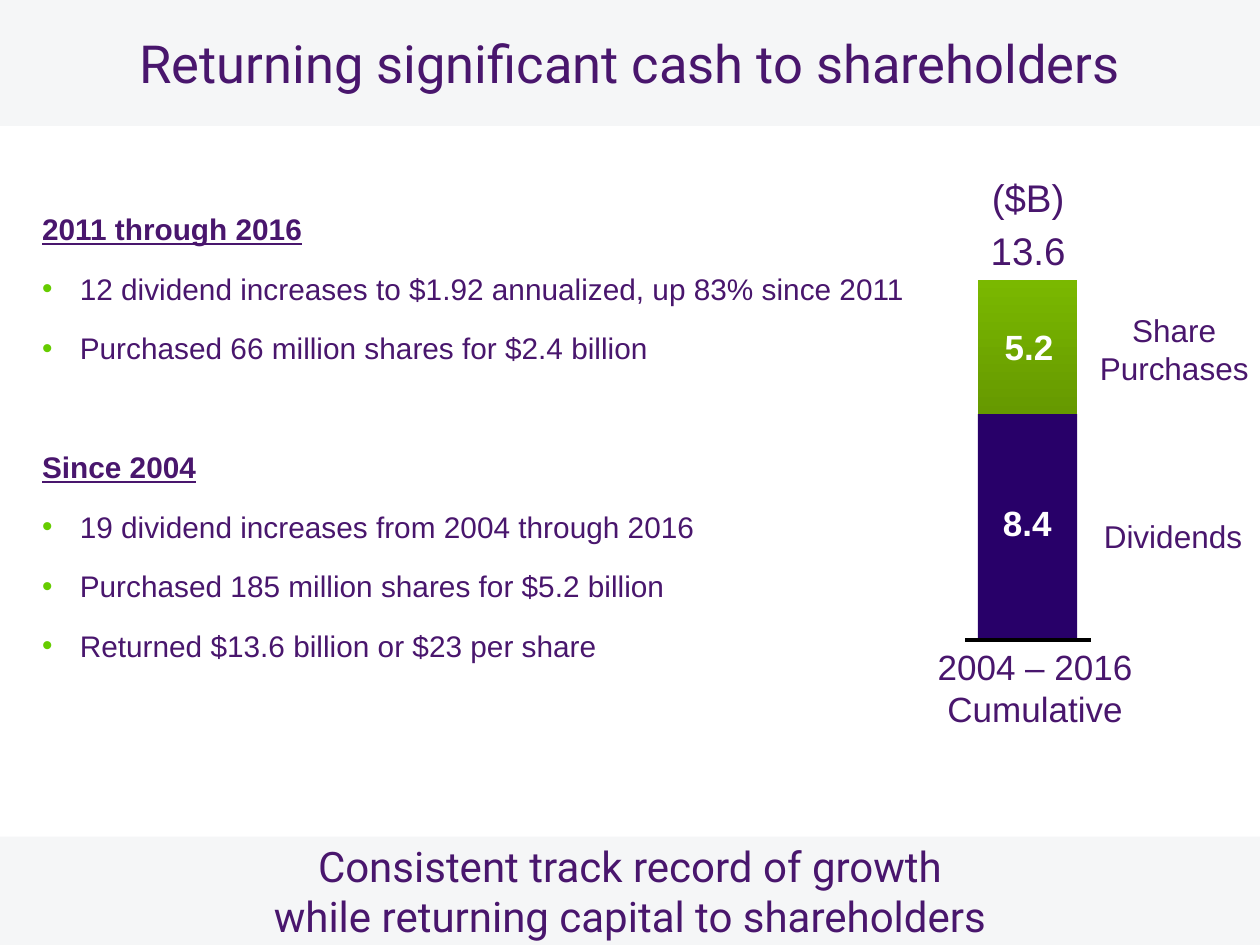
from lxml import etree
from pptx import Presentation
from pptx.dml.color import RGBColor
from pptx.enum.shapes import MSO_CONNECTOR, MSO_SHAPE
from pptx.enum.text import MSO_ANCHOR, PP_ALIGN
from pptx.oxml.ns import qn
from pptx.util import Pt

PURPLE, PALE, WHITE = "49166D", "F5F6F7", "FFFFFF"
rgb = RGBColor.from_string


def write(shape, text, size, color=PURPLE, face="Arial", bold=False, inset=0):
    """Fill a shape with centred text, in the middle of its height."""
    frame = shape.text_frame
    frame.word_wrap = True
    frame.vertical_anchor = MSO_ANCHOR.MIDDLE
    frame.margin_left = frame.margin_right = Pt(inset)
    frame.margin_top = frame.margin_bottom = Pt(inset / 2)
    frame.text = text
    for para in frame.paragraphs:
        para.alignment = PP_ALIGN.CENTER
        for run in para.runs:
            font = run.font
            font.name, font.size, font.bold = face, Pt(size), bold
            font.color.rgb = rgb(color)


def add_rect(left, top, width, height, fill):
    rect = slide.shapes.add_shape(
        MSO_SHAPE.RECTANGLE, Pt(left), Pt(top), Pt(width), Pt(height))
    rect.shadow.inherit = False
    rect.line.fill.background()
    rect.fill.solid()
    rect.fill.fore_color.rgb = rgb(fill)
    return rect


prs = Presentation()
prs.slide_width, prs.slide_height = Pt(720), Pt(540)
slide = prs.slides.add_slide(prs.slide_layouts[5])

# Title band
title = slide.shapes.title
title.left, title.top, title.width, title.height = Pt(0), Pt(0), Pt(720), Pt(72)
title.fill.solid()
title.fill.fore_color.rgb = rgb(PALE)
write(title, "Returning significant cash to shareholders", 30, face="Roboto")

# Headings and bullets
lines = [
    ("2011 through 2016", True),
    ("12 dividend increases to $1.92 annualized, up 83% since 2011", False),
    ("Purchased 66 million shares for $2.4 billion", False),
    ("Since 2004", True),
    ("19 dividend increases from 2004 through 2016", False),
    ("Purchased 185 million shares for $5.2 billion", False),
    ("Returned $13.6 billion or $23 per share", False),
]
body = slide.shapes.add_textbox(Pt(24), Pt(113), Pt(538.5), Pt(346)).text_frame
body.word_wrap = True
body.margin_left = body.margin_right = body.margin_top = body.margin_bottom = 0
body.text = "\n".join(text for text, head in lines)
for i, (para, (text, head)) in enumerate(zip(body.paragraphs, lines)):
    props = para._p.get_or_add_pPr()
    para.line_spacing = Pt(28)
    para.space_before = Pt(0 if i == 0 else 40 if head else 6)
    if not head:
        props.set("marL", str(Pt(21.6)))
        props.set("indent", str(-Pt(21.6)))
        tint = etree.SubElement(props, qn("a:buClr"))
        etree.SubElement(tint, qn("a:srgbClr")).set("val", "66CC00")
        etree.SubElement(props, qn("a:buFont")).set("typeface", "Arial")
        etree.SubElement(props, qn("a:buChar")).set("char", "•")
    font = para.runs[0].font
    font.name, font.size = "Arial", Pt(17)
    font.bold = font.underline = head
    font.color.rgb = rgb(PURPLE)

# Stacked bar on its base line
shares = add_rect(558.8, 160, 56.8, 76.6, "7AB800")
shares.fill.gradient()
shares.fill.gradient_angle = 270
for stop, color in zip(shares.fill.gradient_stops, ("7AB800", "669900")):
    stop.color.rgb = rgb(color)
add_rect(558.8, 236.6, 56.8, 129, "280069")
base = slide.shapes.add_connector(
    MSO_CONNECTOR.STRAIGHT, Pt(551.5), Pt(365.8), Pt(623.5), Pt(365.8))
base.line.color.rgb = rgb("000000")
base.line.width = Pt(2)
etree.SubElement(base._element.spPr, qn("a:effectLst"))

# Labels: text, left, top, width, height, size, colour, bold, inset
labels = [
    ("($B)", 533.5, 96, 108, 33.8, 22, PURPLE, False, 7.2),
    ("13.6", 533.5, 126, 108, 33.8, 22, PURPLE, False, 7.2),
    ("5.2", 537, 186, 102, 24.5, 20, WHITE, True, 0),
    ("8.4", 571, 286.5, 32, 24.5, 20, WHITE, True, 0),
    ("Share Purchases", 602, 174, 138, 51, 18, PURPLE, False, 7.2),
    ("Dividends", 599, 291.6, 142.5, 29, 18, PURPLE, False, 7.2),
    ("2004 – 2016\nCumulative", 516, 368.8, 151, 48, 20, PURPLE, False, 0),
]
for text, left, top, width, height, size, color, bold, inset in labels:
    box = slide.shapes.add_textbox(Pt(left), Pt(top), Pt(width), Pt(height))
    write(box, text, size, color, bold=bold, inset=inset)

# Closing band
band = add_rect(0, 478, 720, 62, PALE)
write(band, "Consistent track record of growth\n"
      "while returning capital to shareholders", 24, face="Roboto")

prs.save("out.pptx")
